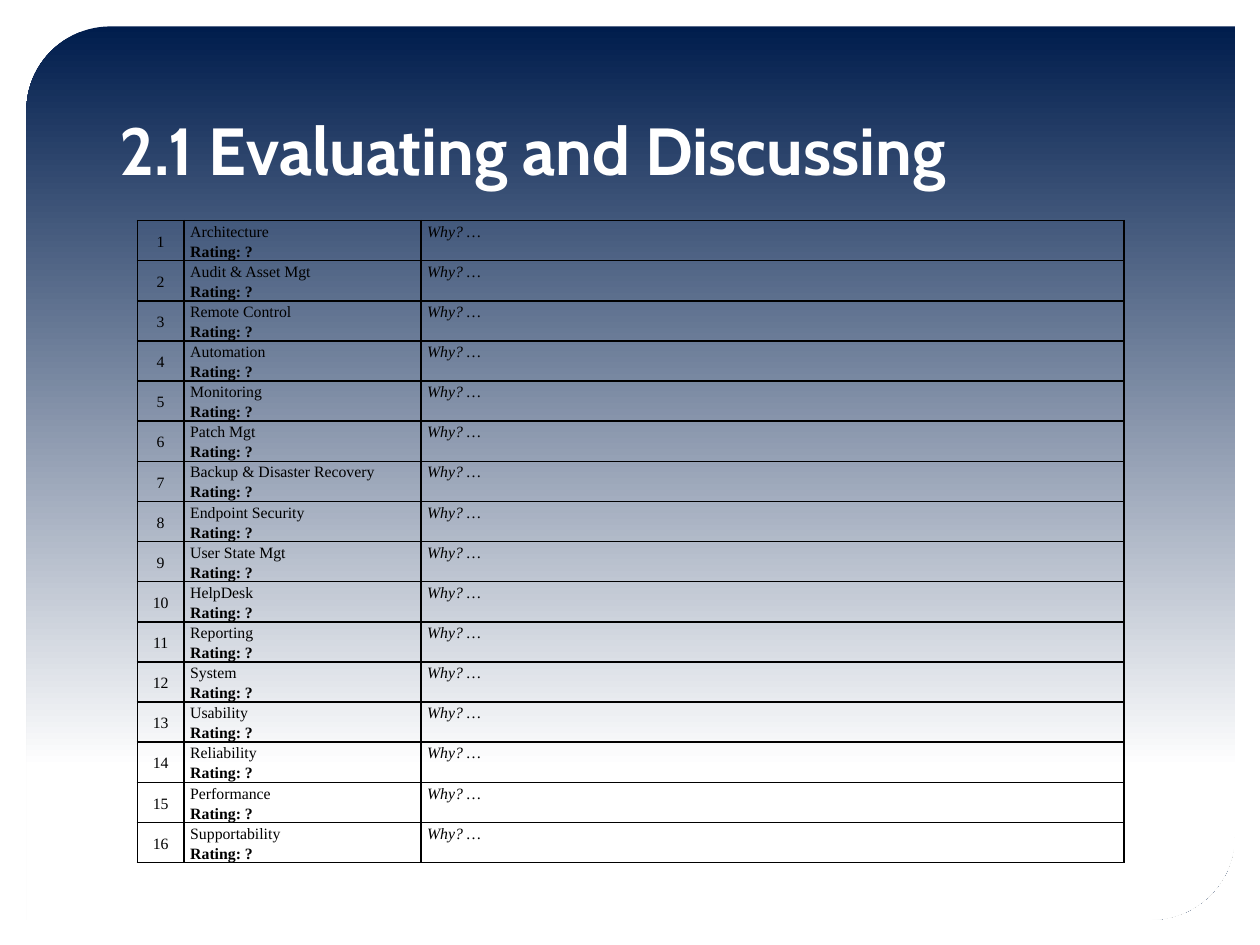
from lxml import etree
from pptx import Presentation
from pptx.dml.color import RGBColor
from pptx.enum.shapes import MSO_SHAPE
from pptx.enum.text import MSO_ANCHOR, PP_ALIGN
from pptx.oxml.ns import qn
from pptx.util import Inches, Pt

PANEL = MSO_SHAPE.ROUND_2_DIAG_RECTANGLE
TOP, MIDDLE, BOTTOM = MSO_ANCHOR.TOP, MSO_ANCHOR.MIDDLE, MSO_ANCHOR.BOTTOM
LEFT, CENTER = PP_ALIGN.LEFT, PP_ALIGN.CENTER

COLORS = {"navy": "001D4D", "white": "FFFFFF", "black": "000000"}
TOPICS = [
    "Architecture", "Audit & Asset Mgt", "Remote Control", "Automation",
    "Monitoring", "Patch Mgt", "Backup & Disaster Recovery",
    "Endpoint Security", "User State Mgt", "HelpDesk", "Reporting", "System",
    "Usability", "Reliability", "Performance", "Supportability",
]
COLS = [0.37, 1.88, 5.58]
ROW = 0.28
LEADING = 11.45


def color(name):
    return RGBColor.from_string(COLORS[name])


def add_run(para, text, size, face, tint, bold=False, italic=False):
    run = para.add_run()
    run.text = text
    font = run.font
    font.size, font.name = Pt(size), face
    font.bold, font.italic = bold, italic
    font.color.rgb = color(tint)


def add_panel(slide, left, top, width, height):
    panel = slide.shapes.add_shape(
        PANEL, Inches(left), Inches(top), Inches(width), Inches(height))
    panel.shadow.inherit = False
    panel.adjustments[0] = 0.094
    panel.adjustments[1] = 0
    panel.line.fill.background()
    panel.fill.gradient()
    panel.fill.gradient_angle = 270
    stops = panel.fill.gradient_stops
    for stop, place, tint in zip(stops, (0, 0.83), ("navy", "white")):
        stop.position = place
        stop.color.rgb = color(tint)


def add_title(slide, left, top, width, height):
    box = slide.shapes.add_textbox(
        Inches(left), Inches(top), Inches(width), Inches(height))
    frame = box.text_frame
    frame.word_wrap = True
    frame.vertical_anchor = BOTTOM
    add_run(frame.paragraphs[0], "2.1 Evaluating and Discussing",
            38, "Cabin", "white", bold=True)


def add_border(cell):
    props = cell._tc.get_or_add_tcPr()
    for side in ("lnL", "lnR", "lnT", "lnB"):
        line = etree.SubElement(props, qn(f"a:{side}"), w=str(Pt(1)))
        fill = etree.SubElement(line, qn("a:solidFill"))
        etree.SubElement(fill, qn("a:srgbClr"), val=COLORS["black"])


def fill_cell(cell, lines, align=LEFT, anchor=TOP):
    """Write one paragraph for each (text, bold, italic) line."""
    add_border(cell)
    cell.fill.background()
    cell.vertical_anchor = anchor
    cell.margin_left = cell.margin_right = Inches(0.05)
    cell.margin_top = cell.margin_bottom = 0
    frame = cell.text_frame
    for i, (text, bold, italic) in enumerate(lines):
        para = frame.add_paragraph() if i else frame.paragraphs[0]
        para.alignment = align
        para.line_spacing = Pt(LEADING)
        add_run(para, text, 9, "Times New Roman", "black", bold, italic)


def add_ratings(slide, left, top):
    count = len(TOPICS)
    table = slide.shapes.add_table(
        count, len(COLS), Inches(left), Inches(top),
        Inches(sum(COLS)), Inches(ROW * count)).table
    table.first_row = table.horz_banding = False
    for col, width in zip(table.columns, COLS):
        col.width = Inches(width)
    for i, topic in enumerate(TOPICS):
        table.rows[i].height = Inches(ROW)
        number, name, reason = table.rows[i].cells
        fill_cell(number, [(str(i + 1), False, False)], CENTER, MIDDLE)
        fill_cell(name, [(topic, False, False), ("Rating: ?", True, False)])
        fill_cell(reason, [("Why? …", False, True)])


def main():
    deck = Presentation()
    deck.slide_width, deck.slide_height = Inches(10), Inches(7.5)
    slide = deck.slides.add_slide(deck.slide_layouts[6])
    add_panel(slide, 0.21, 0.21, 9.59, 7.09)
    add_title(slide, 0.85, 0.41, 8.29, 1.14)
    add_ratings(slide, 1.09, 1.75)
    deck.save("out.pptx")


if __name__ == "__main__":
    main()
